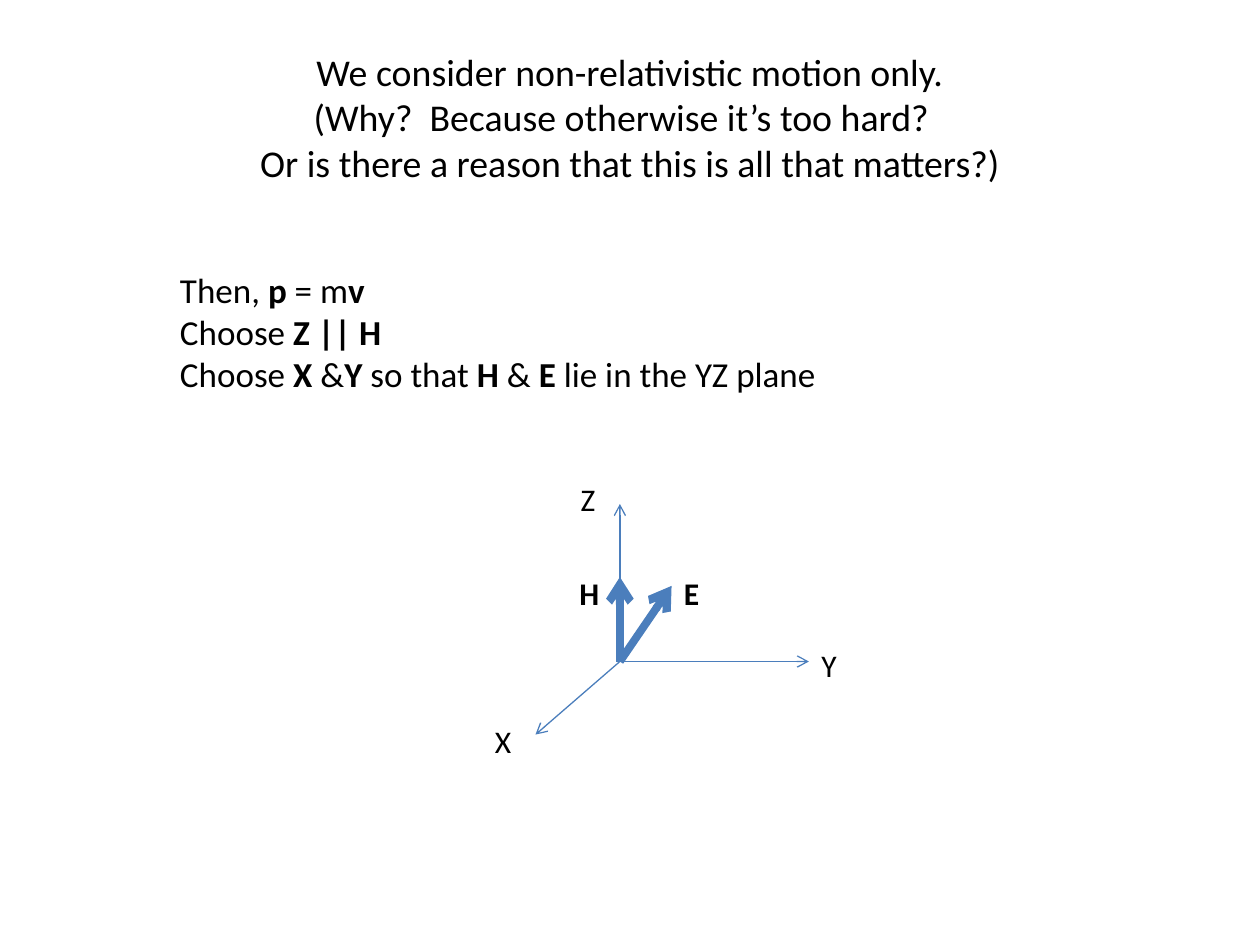
from dataclasses import dataclass

from lxml.etree import SubElement
from pptx import Presentation
from pptx.dml.color import RGBColor
from pptx.enum.shapes import MSO_CONNECTOR
from pptx.enum.text import MSO_ANCHOR, MSO_AUTO_SIZE, PP_ALIGN
from pptx.oxml.ns import qn
from pptx.util import Inches, Pt

BLACK = RGBColor(0x00, 0x00, 0x00)
BLUE = RGBColor(0x4B, 0x7E, 0xBC)
FONT_NAME = "Calibri"
ORIGIN = (4.92, 5.25)
AXIS_WIDTH, VECTOR_WIDTH = 0.75, 4.5


@dataclass(frozen=True)
class Span:
    text: str
    bold: bool = False


@dataclass(frozen=True)
class TextBlock:
    left: float
    top: float
    width: float
    height: float
    paragraphs: list[list[Span]]
    size: float = 18
    wrap: bool = False
    align: PP_ALIGN = PP_ALIGN.LEFT
    anchor: MSO_ANCHOR = MSO_ANCHOR.TOP
    auto_size: MSO_AUTO_SIZE = MSO_AUTO_SIZE.SHAPE_TO_FIT_TEXT


@dataclass(frozen=True)
class Arrow:
    tip: tuple[float, float]
    width: float


def label(text: str, left: float, top: float, width: float, bold: bool = False) -> TextBlock:
    return TextBlock(left, top, width, 0.4, [[Span(text, bold)]])


TITLE = TextBlock(
    0.5, 0.3, 9, 1.25,
    [[Span(
        "We consider non-relativistic motion only.\n"
        "(Why?  Because otherwise it’s too hard?  \n"
        "Or is there a reason that this is all that matters?)"
    )]],
    size=21.6, wrap=True, align=PP_ALIGN.CENTER,
    anchor=MSO_ANCHOR.MIDDLE, auto_size=MSO_AUTO_SIZE.NONE,
)
CHOICES = TextBlock(
    1.33, 2.08, 5.58, 1.11,
    [
        [Span("Then, "), Span("p", True), Span(" = m"), Span("v", True)],
        [Span("Choose "), Span("Z || H", True)],
        [
            Span("Choose "), Span("X ", True), Span("&"), Span("Y", True),
            Span(" so that "), Span("H", True), Span(" & "), Span("E", True),
            Span(" lie in the YZ plane"),
        ],
    ],
    size=20, wrap=True,
)
AXES = [Arrow(tip, AXIS_WIDTH) for tip in ((4.25, 5.83), (4.92, 4), (6.42, 5.25))]
AXIS_LABELS = [
    label("X", 3.83, 5.68, 0.33),
    label("Y", 6.42, 5.08, 0.32),
    label("Z", 4.51, 3.76, 0.32),
]
FIELDS = [Arrow(tip, VECTOR_WIDTH) for tip in ((4.92, 4.58), (5.33, 4.65))]
FIELD_LABELS = [
    label("H", 4.5, 4.51, 0.36, bold=True),
    label("E", 5.33, 4.51, 0.32, bold=True),
]


def add_span(para, span: Span, size: float) -> None:
    """Add the span's text as runs, with a line break at each newline."""
    for index, line in enumerate(span.text.split("\n")):
        if index:
            para.add_line_break()
        run = para.add_run()
        run.text = line
        font_format = {"name": FONT_NAME, "size": Pt(size), "bold": span.bold}
        for name, value in font_format.items():
            setattr(run.font, name, value)
        run.font.color.rgb = BLACK


def add_text(slide, block: TextBlock) -> None:
    box = slide.shapes.add_textbox(
        Inches(block.left), Inches(block.top), Inches(block.width), Inches(block.height)
    )
    frame = box.text_frame
    frame_format = {
        "word_wrap": block.wrap,
        "auto_size": block.auto_size,
        "vertical_anchor": block.anchor,
    }
    for name, value in frame_format.items():
        setattr(frame, name, value)
    for index, spans in enumerate(block.paragraphs):
        para = frame.add_paragraph() if index else frame.paragraphs[0]
        para.alignment = block.align
        for span in spans:
            add_span(para, span, block.size)


def add_arrow(slide, arrow: Arrow) -> None:
    """Draw an arrow from the origin to its tip."""
    ends = [Inches(length) for length in (*ORIGIN, *arrow.tip)]
    connector = slide.shapes.add_connector(MSO_CONNECTOR.STRAIGHT, *ends)
    connector.line.color.rgb = BLUE
    connector.line.width = Pt(arrow.width)
    SubElement(connector.line._get_or_add_ln(), qn("a:tailEnd"), type="arrow")
    SubElement(connector._element.spPr, qn("a:effectLst"))


def main() -> None:
    deck = Presentation()
    deck.slide_width, deck.slide_height = Inches(10), Inches(7.5)
    slide = deck.slides.add_slide(deck.slide_layouts[6])
    add_text(slide, TITLE)
    for arrows, labels in ((AXES, AXIS_LABELS), (FIELDS, FIELD_LABELS)):
        for arrow in arrows:
            add_arrow(slide, arrow)
        for block in labels:
            add_text(slide, block)
    add_text(slide, CHOICES)
    deck.save("out.pptx")


if __name__ == "__main__":
    main()
